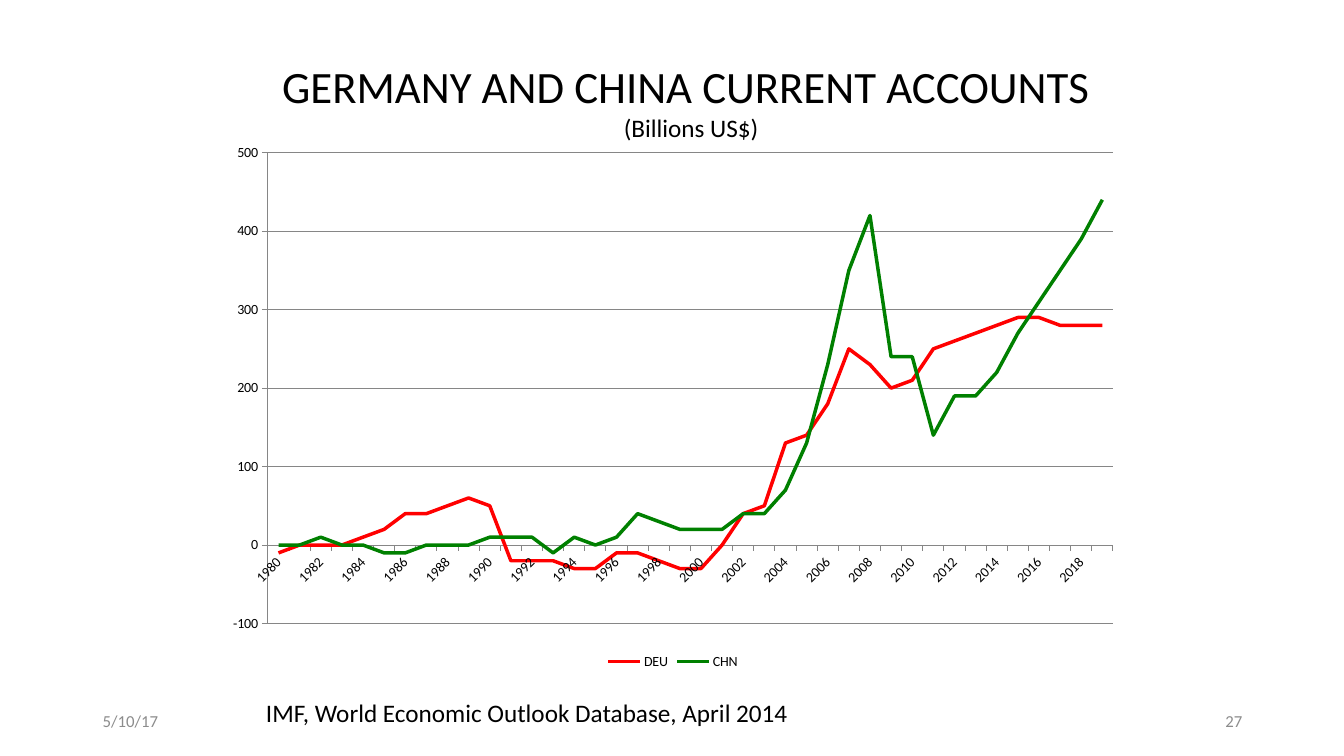
"""Builds a slide comparing the current accounts of Germany and China."""
from pptx import Presentation
from pptx.chart.data import CategoryChartData
from pptx.dml.color import RGBColor
from pptx.enum.chart import XL_CHART_TYPE, XL_LEGEND_POSITION, XL_MARKER_STYLE, XL_TICK_MARK
from pptx.enum.text import MSO_ANCHOR, PP_ALIGN
from pptx.oxml import parse_xml
from pptx.oxml.ns import nsdecls
from pptx.util import Inches, Pt

LINE_CHART = XL_CHART_TYPE.LINE
LEGEND_BOTTOM = XL_LEGEND_POSITION.BOTTOM
NO_MARKER = XL_MARKER_STYLE.NONE
TICK_OUTSIDE = XL_TICK_MARK.OUTSIDE
LEFT, CENTER, RIGHT = PP_ALIGN.LEFT, PP_ALIGN.CENTER, PP_ALIGN.RIGHT
TOP, MIDDLE = MSO_ANCHOR.TOP, MSO_ANCHOR.MIDDLE

BLACK = RGBColor(0x00, 0x00, 0x00)
GRAY = RGBColor(0x8C, 0x8C, 0x8C)
AXIS_GRAY = RGBColor(0x86, 0x86, 0x86)
RED = RGBColor(0xFF, 0x00, 0x00)
GREEN = RGBColor(0x00, 0x80, 0x00)
FONT = "Calibri"

YEARS = range(1980, 2020)
ACCOUNTS = {
    "DEU": (RED, [-10, 0, 0, 0, 10, 20, 40, 40, 50, 60,
                  50, -20, -20, -20, -30, -30, -10, -10, -20, -30,
                  -30, 0, 40, 50, 130, 140, 180, 250, 230, 200,
                  210, 250, 260, 270, 280, 290, 290, 280, 280, 280]),
    "CHN": (GREEN, [0, 0, 10, 0, 0, -10, -10, 0, 0, 0,
                    10, 10, 10, -10, 10, 0, 10, 40, 30, 20,
                    20, 20, 40, 40, 70, 130, 230, 350, 420, 240,
                    240, 140, 190, 190, 220, 270, 310, 350, 390, 440]),
}


def add_text(page, box, lines, color=BLACK, align=LEFT, anchor=TOP, wrap=True):
    """Place a text box holding (text, size) lines."""
    frame = page.shapes.add_textbox(*map(Inches, box)).text_frame
    frame.word_wrap = wrap
    frame.vertical_anchor = anchor
    frame.text = "\n".join(text for text, _ in lines)
    for para, (_, size) in zip(frame.paragraphs, lines):
        para.alignment = align
        font = para.runs[0].font
        font.name, font.size, font.color.rgb = FONT, Pt(size), color


def style_axes(chart):
    """Set scale, ticks, lines and slanted year labels."""
    years, amounts = chart.category_axis, chart.value_axis
    amounts.minimum_scale, amounts.maximum_scale = -100, 500
    amounts.major_unit = 100
    amounts.has_major_gridlines = True
    amounts.major_gridlines.format.line.color.rgb = AXIS_GRAY
    for axis in (years, amounts):
        axis.major_tick_mark = TICK_OUTSIDE
        axis.format.line.color.rgb = AXIS_GRAY
        axis.tick_labels.font.size = Pt(10)
    year_axis = chart.element.find(".//{*}catAx")
    year_axis.find("{*}txPr/{*}bodyPr").set("rot", "-2700000")
    skip = parse_xml(f'<c:tickLblSkip {nsdecls("c")} val="2"/>')
    year_axis.find("{*}noMultiLvlLbl").addprevious(skip)


def add_accounts_chart(page, box):
    """Place the line chart of both current accounts."""
    data = CategoryChartData()
    data.categories = [str(year) for year in YEARS]
    for name, (_, values) in ACCOUNTS.items():
        data.add_series(name, values)
    chart = page.shapes.add_chart(LINE_CHART, *map(Inches, box), data).chart
    chart.has_title = False
    chart.font.name, chart.font.size = FONT, Pt(10)
    chart.font.color.rgb = BLACK
    chart.has_legend = True
    chart.legend.position = LEGEND_BOTTOM
    chart.legend.include_in_layout = False
    chart.plots[0].vary_by_categories = False
    for series in chart.plots[0].series:
        series.smooth = False
        series.marker.style = NO_MARKER
        series.format.line.color.rgb = ACCOUNTS[series.name][0]
        series.format.line.width = Pt(2.5)
    style_axes(chart)


def add_footer(page, box):
    """Place the date and the page number at the ends of the footer."""
    left, top, width, height = box
    part = 3
    for x, text, align in ((left, "5/10/17", LEFT), (left + width - part, "27", RIGHT)):
        add_text(page, (x, top, part, height), [(text, 12)], GRAY, align, MIDDLE)


def main():
    """Build and save the deck."""
    deck = Presentation()
    deck.slide_width, deck.slide_height = Inches(13.33), Inches(7.5)
    page = deck.slides.add_slide(deck.slide_layouts[6])
    add_text(page, (2.54, 6.87, 5.47, 0.71),
             [("IMF, World Economic Outlook Database, April 2014", 18)], wrap=False)
    add_text(page, (2.54, 0.53, 8.63, 1.25),
             [("GERMANY AND CHINA CURRENT ACCOUNTS ", 32), ("(Billions US$)", 18)],
             align=CENTER)
    add_accounts_chart(page, (2.13, 1.33, 9.09, 5.35))
    add_footer(page, (0.92, 6.95, 11.5, 0.4))
    deck.save("out.pptx")


if __name__ == "__main__":
    main()
